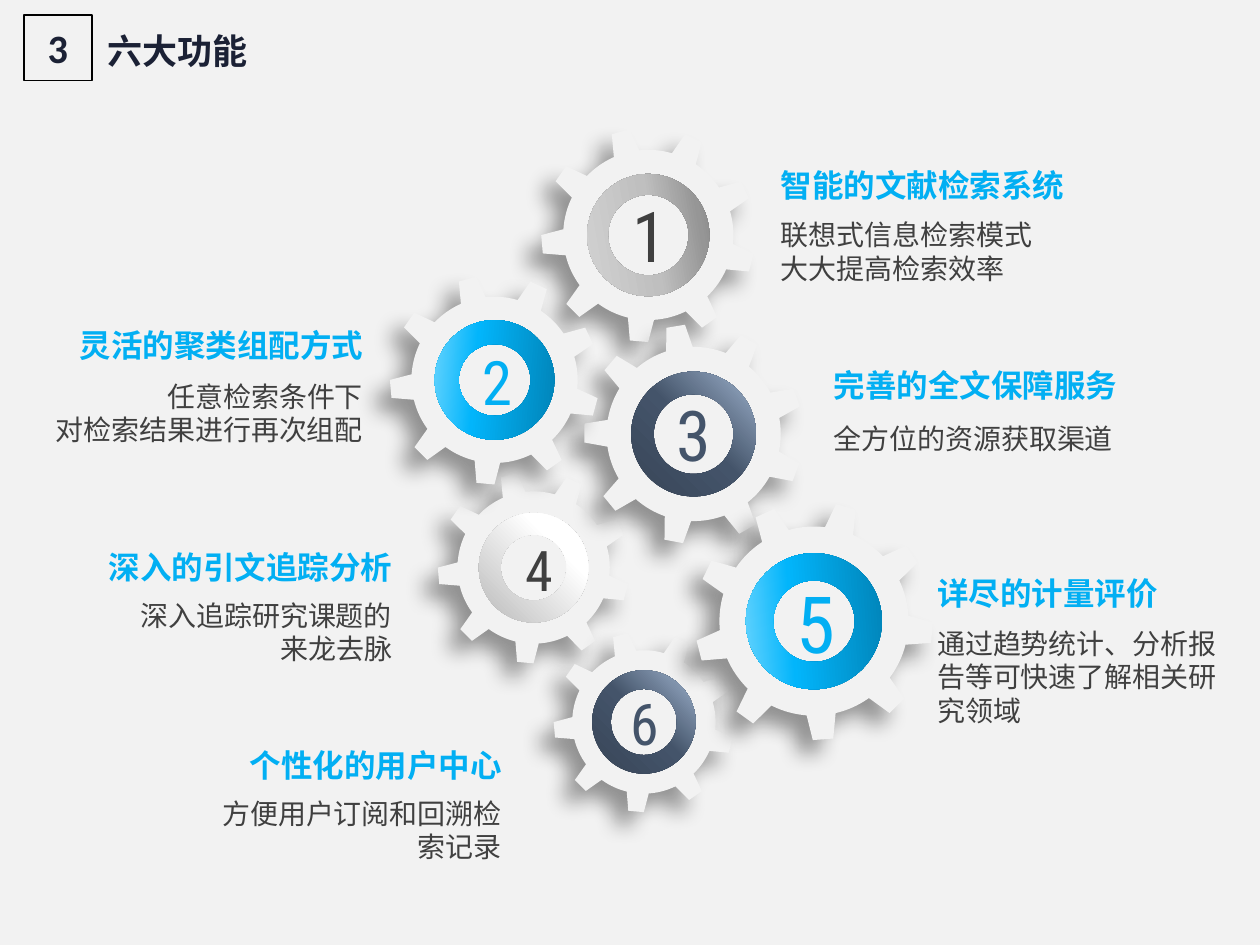
from collections import namedtuple

from lxml import etree
from pptx import Presentation
from pptx.dml.color import RGBColor
from pptx.enum.shapes import MSO_SHAPE
from pptx.enum.text import MSO_ANCHOR, MSO_AUTO_SIZE, PP_ALIGN
from pptx.oxml import parse_xml
from pptx.oxml.ns import nsdecls, qn
from pptx.util import Inches, Pt

LEFT, CENTER, RIGHT = PP_ALIGN.LEFT, PP_ALIGN.CENTER, PP_ALIGN.RIGHT
MIDDLE = MSO_ANCHOR.MIDDLE
GEAR, DONUT, RECTANGLE = MSO_SHAPE.GEAR_9, MSO_SHAPE.DONUT, MSO_SHAPE.RECTANGLE
FIT_TEXT = MSO_AUTO_SIZE.SHAPE_TO_FIT_TEXT

BACKGROUND = RGBColor(0xF2, 0xF2, 0xF2)
BLACK = RGBColor(0x00, 0x00, 0x00)
NAVY = RGBColor(0x1B, 0x21, 0x35)
BLUE = RGBColor(0x02, 0xAF, 0xF3)
SLATE = RGBColor(0x44, 0x54, 0x6A)
GREY = RGBColor(0x40, 0x40, 0x40)

CHINESE_FONT = "Noto Sans CJK SC"
NUMBER_FONT = "Roboto Condensed"
TITLE_NUMBER_FONT = "Calibri"

LINEAR = '<a:lin ang="18900000" scaled="0"/>'
RADIAL = '<a:path path="circle"><a:fillToRect l="100000" b="100000"/></a:path>'
SILVER_RING = ([(0, "6F6F6F"), (23, "969696"), (48, "BFBFBF"), (100, "D9D9D9")], LINEAR)
BLUE_RING = ([(0, "0175A3"), (61, "02B5FB"), (85, "61D2FE")], LINEAR)
SLATE_RING = ([(0, "D6DCE5"), (24, "8497B0"), (49, "44546A"), (100, "333F50")], RADIAL)
WHITE_RING = ([(0, "FFFFFF"), (35, "FFFFFF"), (100, "A6A6A6")], RADIAL)

Gear = namedtuple("Gear", "left top size turn ring_size ring_turn thickness ring")
GEARS = [
    Gear(3.47, 3.74, 1.53, 65, 0.87, 230, 0.2, WHITE_RING),
    Gear(4.29, 1.01, 1.71, 65, 0.97, 215, 0.17, SILVER_RING),
    Gear(4.63, 2.57, 1.75, 70.5, 0.99, 215.3, 0.18, SLATE_RING),
    Gear(3.09, 2.18, 1.67, 65, 0.95, 230, 0.2, BLUE_RING),
    Gear(4.39, 5.01, 1.44, 65, 0.82, 209.8, 0.18, SLATE_RING),
    Gear(5.51, 3.98, 1.9, 55.6, 1.08, 220.6, 0.2, BLUE_RING),
]

# number, box (left, top, width, height), size, colour, wrap
NUMBERS = [
    ("1", (4.92, 1.48, 0.42, 0.77), 40, GREY, False),
    ("2", (3.72, 2.68, 0.45, 0.69), 35, BLUE, False),
    ("3", (5.26, 3.06, 0.5, 0.77), 40, SLATE, False),
    ("4", (4.07, 4.2, 0.32, 0.64), 32, GREY, True),
    ("5", (6.21, 4.51, 0.54, 0.86), 45, BLUE, False),
    ("6", (4.89, 5.41, 0.45, 0.66), 33, SLATE, False),
]

# edge is the x position where the text aligns
Feature = namedtuple(
    "Feature", "heading lines align edge heading_top top width height spacing",
    defaults=[None])
FEATURES = [
    Feature("智能的文献检索系统", ["联想式信息检索模式", "大大提高检索效率"],
            LEFT, 6.1, 1.27, 1.68, 2.3, 0.64),
    Feature("灵活的聚类组配方式", ["任意检索条件下", "对检索结果进行再次组配"],
            RIGHT, 2.98, 2.54, 2.96, 2.84, 0.64),
    Feature("完善的全文保障服务", ["全方位的资源获取渠道"],
            LEFT, 6.52, 2.86, 3.16, 2.47, 0.5, 1.5),
    Feature("深入的引文追踪分析", ["深入追踪研究课题的", "来龙去脉"],
            RIGHT, 3.21, 4.3, 4.7, 2.91, 0.64),
    Feature("详尽的计量评价", ["通过趋势统计、分析报告等可快速了解相关研究领域"],
            LEFT, 7.34, 4.51, 4.92, 2.55, 0.91),
    Feature("个性化的用户中心", ["方便用户订阅和回溯检索记录"],
            RIGHT, 4.08, 5.87, 6.27, 2.47, 0.64),
]


class SlideBuilder:
    def __init__(self, slide):
        self.slide = slide
        fill = slide.background.fill
        fill.solid()
        fill.fore_color.rgb = BACKGROUND

    def fill_text(self, frame, lines, size, color, font=CHINESE_FONT, bold=False,
                  align=LEFT, spacing=None):
        for index, line in enumerate(lines):
            paragraph = frame.add_paragraph() if index else frame.paragraphs[0]
            paragraph.text = line
            paragraph.alignment = align
            if spacing:
                paragraph.line_spacing = spacing
            paragraph.font.size = Pt(size)
            paragraph.font.bold = bold
            paragraph.font.name = font
            paragraph.font.color.rgb = color
            properties = paragraph._p.pPr.find(qn("a:defRPr"))
            etree.SubElement(properties, qn("a:ea")).set("typeface", font)

    def text(self, box, lines, size, color, wrap=True, **style):
        shape = self.slide.shapes.add_textbox(*map(Inches, box))
        shape.text_frame.word_wrap = wrap
        shape.text_frame.auto_size = FIT_TEXT
        self.fill_text(shape.text_frame, lines, size, color, **style)

    def title(self, number, text):
        title = self.slide.shapes.title
        title.left, title.top, title.width, title.height = map(
            Inches, (0.75, 0.15, 2.16, 0.47))
        title.text_frame.word_wrap = True
        title.text_frame.auto_size = FIT_TEXT
        title.text_frame.vertical_anchor = MIDDLE
        self.fill_text(title.text_frame, [text], 20, NAVY, bold=True, spacing=1.1)

        frame = self.slide.shapes.add_shape(
            RECTANGLE, *map(Inches, (0.19, 0.12, 0.54, 0.52)))
        frame.shadow.inherit = False
        frame.fill.background()
        frame.line.color.rgb = BLACK
        frame.line.width = Pt(0.75)
        frame.text_frame.vertical_anchor = MIDDLE
        self.fill_text(frame.text_frame, [number], 23, NAVY,
                       font=TITLE_NUMBER_FONT, bold=True, align=CENTER)

    def gear(self, gear):
        """Draw a toothed wheel with a shadow and a gradient ring at its centre."""
        group = self.slide.shapes.add_group_shape()
        wheel = group.shapes.add_shape(
            GEAR, *map(Inches, (gear.left, gear.top, gear.size, gear.size)))
        wheel.rotation = gear.turn
        wheel.adjustments[0], wheel.adjustments[1] = 0.105, 0.018
        wheel.fill.solid()
        wheel.fill.fore_color.rgb = BACKGROUND
        wheel.line.fill.background()
        wheel._element.spPr.append(parse_xml(
            f'<a:effectLst {nsdecls("a")}><a:outerShdw blurRad="{Pt(12)}" '
            f'dist="{Pt(11)}" dir="8100000" algn="tr" rotWithShape="0">'
            '<a:srgbClr val="000000"><a:alpha val="40000"/></a:srgbClr>'
            '</a:outerShdw></a:effectLst>'))

        inset = (gear.size - gear.ring_size) / 2
        ring = group.shapes.add_shape(DONUT, *map(Inches, (
            gear.left + inset, gear.top + inset, gear.ring_size, gear.ring_size)))
        ring.rotation = gear.ring_turn
        ring.adjustments[0] = gear.thickness
        ring.shadow.inherit = False
        ring.line.fill.background()
        stops, direction = gear.ring
        stop_list = "".join(
            f'<a:gs pos="{position * 1000}"><a:srgbClr val="{color}"/></a:gs>'
            for position, color in stops)
        ring._element.spPr.find(qn("a:prstGeom")).addnext(parse_xml(
            f'<a:gradFill {nsdecls("a")} rotWithShape="1">'
            f'<a:gsLst>{stop_list}</a:gsLst>{direction}</a:gradFill>'))

    def feature(self, feature):
        heading_width = 0.25 * len(feature.heading) + 0.22

        def left(width):
            return feature.edge - (width if feature.align == RIGHT else 0)

        self.text((left(heading_width), feature.heading_top, heading_width, 0.4),
                  [feature.heading], 18, BLUE, wrap=False, bold=True,
                  align=feature.align)
        self.text((left(feature.width), feature.top, feature.width, feature.height),
                  feature.lines, 16, GREY, align=feature.align,
                  spacing=feature.spacing)


def main():
    presentation = Presentation()
    presentation.slide_width, presentation.slide_height = Inches(10), Inches(7.5)
    title_only = presentation.slide_layouts[5]
    builder = SlideBuilder(presentation.slides.add_slide(title_only))
    builder.title("3", "六大功能")
    for gear in GEARS:
        builder.gear(gear)
    for number, box, size, color, wrap in NUMBERS:
        builder.text(box, [number], size, color, wrap=wrap, font=NUMBER_FONT,
                     align=CENTER)
    for feature in FEATURES:
        builder.feature(feature)
    presentation.save("out.pptx")


if __name__ == "__main__":
    main()
